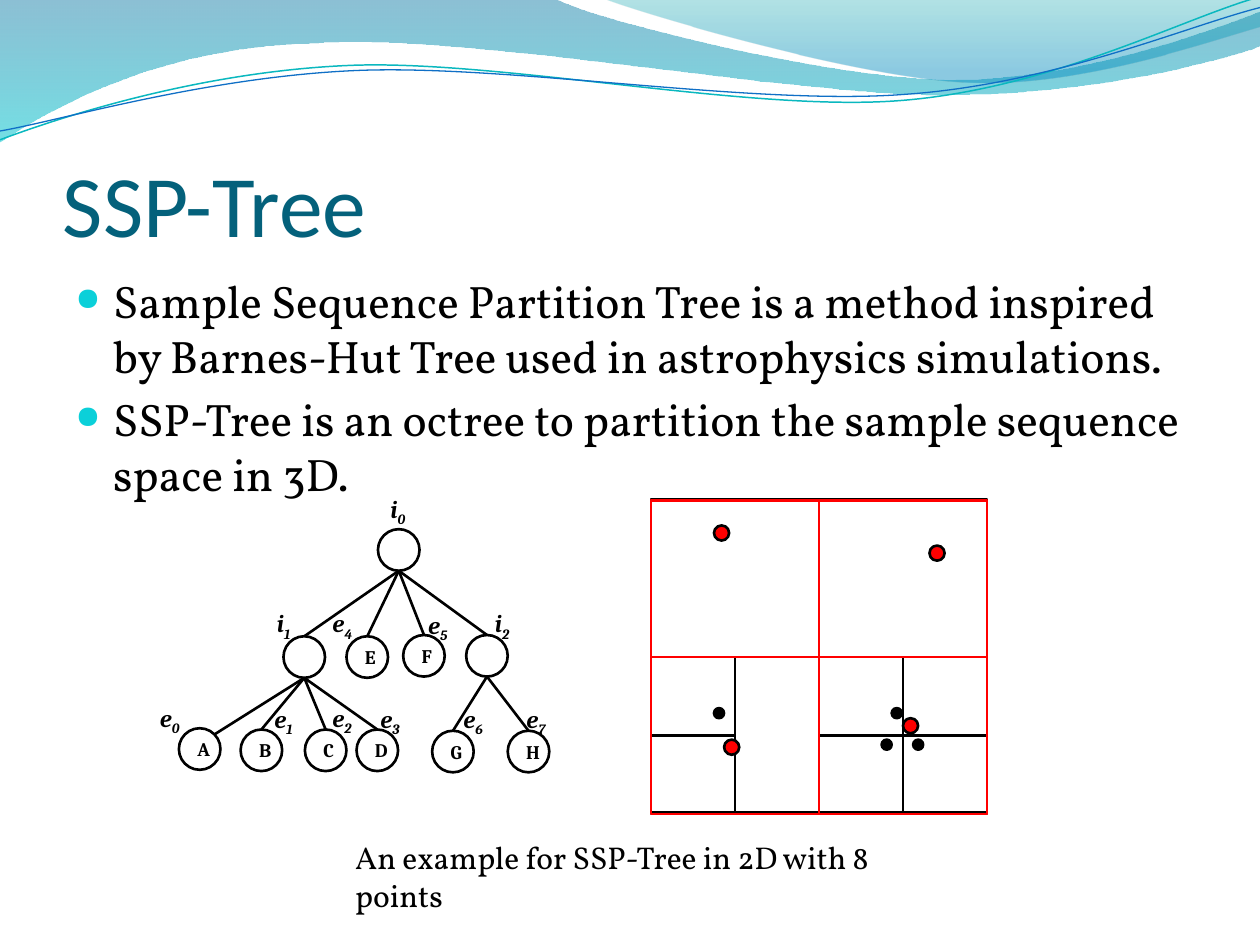
from lxml.etree import SubElement
from pptx import Presentation
from pptx.dml.color import RGBColor
from pptx.enum.shapes import MSO_CONNECTOR, MSO_SHAPE
from pptx.enum.text import MSO_ANCHOR, PP_ALIGN
from pptx.oxml.ns import qn
from pptx.util import Inches, Pt

BLACK, RED = "000000", "FF0000"
NODE = 0.33  # diameter of a tree node


def color(hex_text):
    return RGBColor.from_string(hex_text)


def add_span(para, text, font, size, tint=BLACK, bold=False, italic=False):
    span = para.add_run()
    span.text = text
    span.font.name, span.font.size = font, Pt(size)
    span.font.bold, span.font.italic = bold, italic
    span.font.color.rgb = color(tint)
    return span


def add_text_box(page, box, wrap=True):
    frame = page.shapes.add_textbox(*map(Inches, box)).text_frame
    frame.word_wrap = wrap
    return frame


def add_outline(page, kind, box, line=BLACK, fill=None):
    shape = page.shapes.add_shape(kind, *map(Inches, box))
    shape.shadow.inherit = False
    shape.line.color.rgb, shape.line.width = color(line), Pt(1.5)
    if fill:
        shape.fill.solid()
        shape.fill.fore_color.rgb = color(fill)
    else:
        shape.fill.background()
    return shape


# --- Wave header ---
def add_curve(page, box, steps, closed):
    """Steps hold 1 point (line) or 3 points (cubic curve), relative to the box."""
    points = [(Inches(box[0] + x), Inches(box[1] + y))
              for step in steps for x, y in zip(step[::2], step[1::2])]
    builder = page.shapes.build_freeform(*points[0], scale=1.0)
    builder.add_line_segments(points[1:], close=closed)
    shape = builder.convert_to_shape()
    shape.shadow.inherit = False
    # Join each three control points into one cubic segment
    segments = iter(list(shape._element.iter(qn("a:lnTo"))))
    for step in steps[1:]:
        segment = next(segments)
        if len(step) == 6:
            segment.tag = qn("a:cubicBezTo")
            for _ in range(2):
                extra = next(segments)
                segment.append(extra[0])
                extra.getparent().remove(extra)
    return shape


def add_waves(page, box):
    bands = [
        ([(0, 0), (4.4, -0.01), (4.76, 0.17, 6.64, 0.63, 7.58, 0.63),
          (8.53, 0.63, 9.58, 0.26, 10, 0.09), (10.01, 0.36),
          (9.83, 0.44, 8.7, 0.76, 7.46, 0.75), (6.22, 0.75, 3.82, 0.28, 2.57, 0.34),
          (1.29, 0.36, 0.46, 0.83, -0.01, 1.13)],
         [(0, "0074A1", 45), (1, "00C6CF", 55)]),
        ([(4.79, -0.01), (5.09, 0.11, 6.82, 0.62, 7.69, 0.65),
          (8.56, 0.69, 9.61, 0.32, 10, 0.21), (10, 0)],
         [(0, "00A1A9", 30), (0.8, "008BBF", 45)]),
    ]
    for steps, stops in bands:
        band = add_curve(page, box, steps, True)
        band.line.fill.background()
        band.fill.gradient()
        band.fill.gradient_angle = 270
        for stop, (position, tint, _) in zip(band.fill.gradient_stops, stops):
            stop.position = position
            stop.color.rgb = color(tint)
        for node, (_, _, opacity) in zip(band._element.iter(qn("a:srgbClr")), stops):
            SubElement(node, qn("a:alpha"), val=str(opacity * 1000))

    strands = [
        ([(0, 1.11), (0.48, 0.93, 1.58, 0.57, 2.77, 0.52),
          (3.95, 0.47, 5.93, 0.89, 7.13, 0.8), (8.33, 0.71, 9.38, 0.15, 9.98, -0.02)],
         "0AB8BF", 0.85),
        ([(0, 1.04), (0.47, 0.96, 1.64, 0.61, 2.83, 0.56),
          (4.03, 0.51, 5.97, 0.84, 7.17, 0.75), (8.36, 0.67, 9.41, 0.21, 10, 0.06)],
         "0F6FC6", 0.75),
    ]
    for steps, tint, width in strands:
        strand = add_curve(page, box, steps, False)
        strand.fill.background()
        strand.line.color.rgb, strand.line.width = color(tint), Pt(width)


# --- Title and bullets ---
def add_title(page, box):
    frame = add_text_box(page, box)
    frame.vertical_anchor = MSO_ANCHOR.BOTTOM
    frame.margin_left = frame.margin_right = frame.margin_bottom = 0
    add_span(frame.paragraphs[0], "SSP-Tree", "Calibri", 50, "04617B")


def add_bullets(page, box, lines):
    frame = add_text_box(page, box)
    for i, line in enumerate(lines):
        para = frame.paragraphs[0] if i == 0 else frame.add_paragraph()
        para.space_before = Pt(5.2)
        add_span(para, line, "Vollkorn", 26)
        props = para._p.get_or_add_pPr()
        props.set("marL", str(Inches(0.3)))
        props.set("indent", str(Inches(-0.3)))
        SubElement(SubElement(props, qn("a:buClr")), qn("a:srgbClr"), val="0BD0D9")
        SubElement(props, qn("a:buSzPct"), val="70000")
        SubElement(props, qn("a:buChar"), char="●")


# --- Tree diagram ---
def add_tree(page, box):
    left, top = box[:2]
    # name: parent, letter, node offset, label offset
    nodes = {
        "i0": (None, "", (1.83, 0.33), (1.83, 0)),
        "i1": ("i0", "", (1.08, 1.18), (0.93, 0.91)),
        "e4": ("i0", "E", (1.58, 1.18), (1.37, 0.91)),
        "e5": ("i0", "F", (2.03, 1.17), (2.13, 0.92)),
        "i2": ("i0", "", (2.53, 1.17), (2.66, 0.91)),
        "e0": ("i1", "A", (0.25, 1.91), (0, 1.66)),
        "e1": ("i1", "B", (0.74, 1.92), (0.91, 1.67)),
        "e2": ("i1", "C", (1.25, 1.92), (1.37, 1.66)),
        "e3": ("i1", "D", (1.66, 1.92), (1.75, 1.67)),
        "e6": ("i2", "G", (2.26, 1.93), (2.41, 1.67)),
        "e7": ("i2", "H", (2.86, 1.93), (2.91, 1.67)),
    }
    circles = {}
    for name, (parent, letter, (x, y), (label_x, label_y)) in nodes.items():
        circle = add_outline(page, MSO_SHAPE.OVAL, (left + x, top + y, NODE, NODE))
        circles[name] = circle
        if letter:
            frame = circle.text_frame
            frame.vertical_anchor = MSO_ANCHOR.MIDDLE
            frame.paragraphs[0].alignment = PP_ALIGN.CENTER
            add_span(frame.paragraphs[0], letter, "Cambria", 11, bold=True)
        if parent:
            start = circles[parent]
            branch = page.shapes.add_connector(
                MSO_CONNECTOR.STRAIGHT, start.left + start.width // 2,
                start.top + start.height, Inches(left + x + 0.28), Inches(top + y + 0.05))
            if name != "e0":  # the branch to A meets the side of its circle
                branch.end_connect(circle, 0)
            branch.line.color.rgb, branch.line.width = color(BLACK), Pt(1.5)
            SubElement(branch._element.spPr, qn("a:effectLst"))
        width = 0.34 if name[0] == "i" else 0.38
        para = add_text_box(page, (left + label_x, top + label_y, width, 0.34),
                            wrap=False).paragraphs[0]
        for text in name:
            span = add_span(para, text, "Cambria", 14, bold=True, italic=True)
        span.font._element.set("baseline", "-25000")


# --- Partitioned plane ---
def quadrant(box, column, row):
    left, top, width, height = box
    return left + column * width / 2, top + row * height / 2, width / 2, height / 2


def add_plane(page, box):
    left, top, width, height = box
    add_outline(page, MSO_SHAPE.RECTANGLE, (left, top - 0.01, width, height))
    lower_left, lower_right = quadrant(box, 0, 1), quadrant(box, 1, 1)
    for parent, column, row in ((lower_left, 0, 0), (lower_left, 0, 1),
                                (lower_right, 0, 0), (lower_right, 1, 1)):
        add_outline(page, MSO_SHAPE.RECTANGLE, quadrant(parent, column, row))

    dots = [(0.08, BLACK, [(0.5, 1.65), (1.91, 1.65), (1.83, 1.9), (2.08, 1.9)]),
            (0.12, RED, [(2, 1.73), (0.58, 1.9), (2.21, 0.36), (0.5, 0.2)])]
    for size, fill, places in dots:
        for x, y in places:
            add_outline(page, MSO_SHAPE.OVAL, (left + x, top + y, size, size), fill=fill)

    for cell in (box, quadrant(box, 0, 0), quadrant(box, 1, 0), lower_right):
        add_outline(page, MSO_SHAPE.RECTANGLE, cell, RED)


def main():
    deck = Presentation()
    deck.slide_width, deck.slide_height = Inches(10), Inches(7.5)
    page = deck.slides.add_slide(deck.slide_layouts[6])
    add_waves(page, (0, 0, 10, 1.14))
    add_title(page, (0.5, 0.77, 9, 1.25))
    add_bullets(page, (0.5, 2.12, 9, 4.8), [
        "Sample Sequence Partition Tree is a method inspired by Barnes-Hut Tree "
        "used in astrophysics simulations.",
        "SSP-Tree is an octree to partition the sample sequence space in 3D."])
    add_tree(page, (1.17, 3.87, 3.29, 2.26))
    add_plane(page, (31 / 6, 3.97, 8 / 3, 2.49))
    caption = add_text_box(page, (2.72, 6.6, 5.01, 0.4))
    add_span(caption.paragraphs[0], "An example for SSP-Tree in 2D with 8 points",
             "Vollkorn", 18)
    deck.save("out.pptx")


if __name__ == "__main__":
    main()
